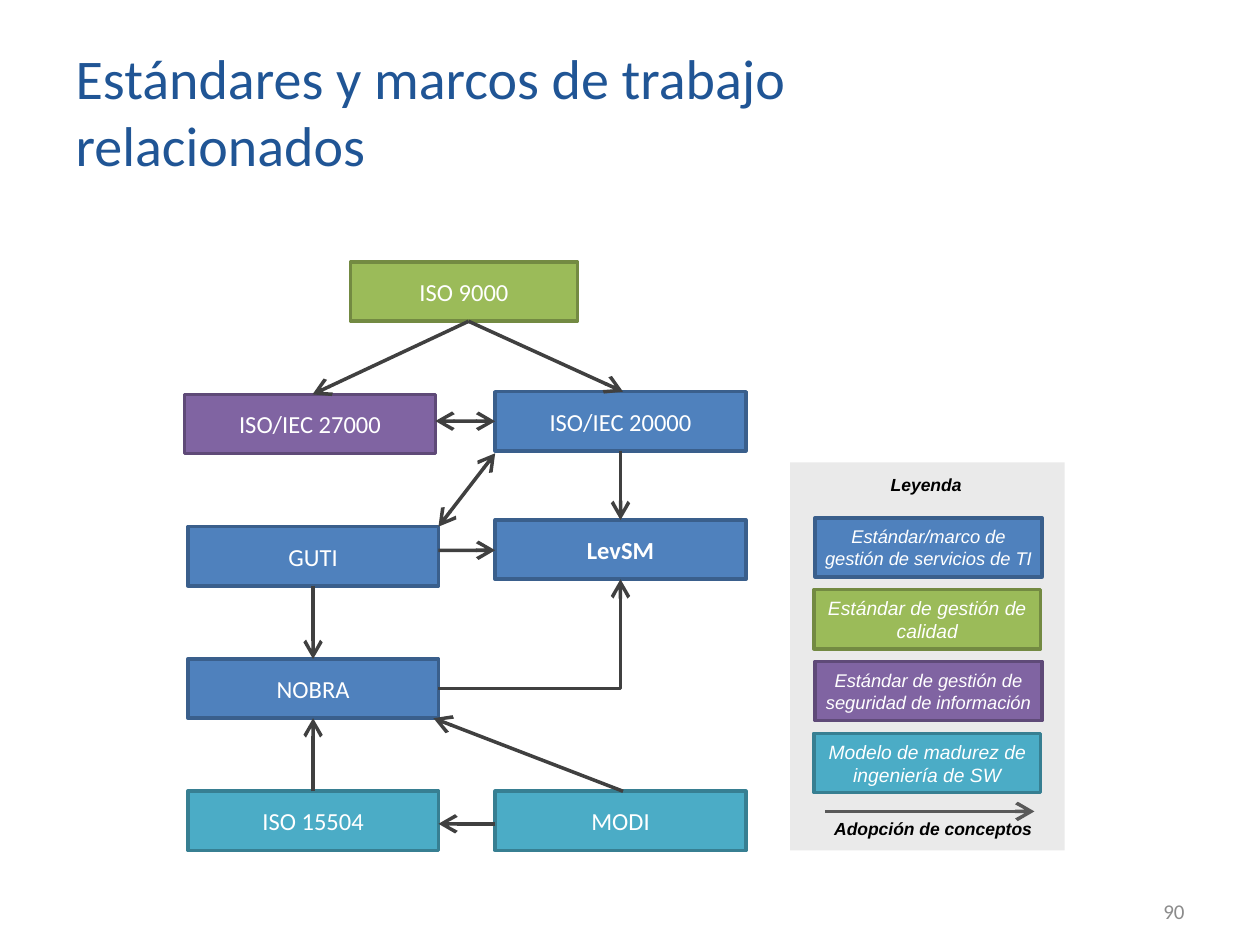
import pptx
import pptx.util
import pptx.dml.color
import pptx.enum.shapes
import pptx.enum.text
import pptx.oxml
import pptx.oxml.ns
from dataclasses import dataclass
from typing import Any

Align = pptx.enum.text.PP_ALIGN
Anchor = pptx.enum.text.MSO_ANCHOR
Point = tuple[float, float]
Rect = tuple[float, float, float, float]

WIDE, HIGH = 10, 7.5
LEFT, TOP = 1.49, 2.08  # first cell of the diagram
COL, ROW = 2.44, 1.05  # steps between cells
TALL = 0.47  # height of every box
STEP = 0.57  # step between legend boxes
COLORS = {
    "title": "205595", "page": "8B8B8B", "panel": "EAEAEA",
    "black": "000000", "white": "FFFFFF", "arrow": "404040", "key": "595959",
    "service": "4F81BD", "service edge": "3A5F8C",
    "quality": "9BBB59", "quality edge": "738A42",
    "safety": "8064A2", "safety edge": "5F4A78",
    "model": "4BACC6", "model edge": "377F92",
}


@dataclass
class Node:
    text: str
    kind: str
    col: float
    row: float
    width: float = 1.99
    bold: bool = False

    def rect(self) -> Rect:
        return LEFT + COL * self.col, TOP + ROW * self.row, self.width, TALL

    def spot(self, share: Point) -> Point:
        """Point at a share of the box's width and height."""
        x, y, w, h = self.rect()
        return x + w * share[0], y + h * share[1]


@dataclass
class Link:
    start: str
    leave: Point
    end: str
    enter: Point
    both: bool = False
    bent: bool = False


@dataclass
class Entry:
    text: str
    kind: str
    size: float
    left: float


NODES = [
    Node("ISO 9000", "quality", 0.53, 0, 1.8),
    Node("ISO/IEC 27000", "safety", -0.01, 1),
    Node("ISO/IEC 20000", "service", 1, 0.98),
    Node("GUTI", "service", 0, 2),
    Node("LevSM", "service", 1, 1.95, bold=True),
    Node("NOBRA", "service", 0, 3),
    Node("ISO 15504", "model", 0, 4),
    Node("MODI", "model", 1, 4),
]
LINKS = [
    Link("ISO 9000", (0.52, 1), "ISO/IEC 27000", (0.51, 0)),
    Link("ISO 9000", (0.52, 1), "ISO/IEC 20000", (0.51, 0)),
    Link("ISO/IEC 27000", (1, 0.45), "ISO/IEC 20000", (0, 0.5), both=True),
    Link("GUTI", (1, 0), "ISO/IEC 20000", (0, 1.04), both=True),
    Link("GUTI", (1, 0.4), "LevSM", (0, 0.51)),
    Link("ISO/IEC 20000", (0.5, 1), "LevSM", (0.5, 0)),
    Link("GUTI", (0.5, 1), "NOBRA", (0.5, 0)),
    Link("NOBRA", (1, 0.5), "LevSM", (0.5, 1), bent=True),
    Link("ISO 15504", (0.5, 0), "NOBRA", (0.5, 1)),
    Link("MODI", (0.51, 0), "NOBRA", (0.98, 1)),
    Link("MODI", (0, 0.55), "ISO 15504", (1, 0.55)),
]
LEGEND = [
    Entry("Estándar/marco de gestión de servicios de TI", "service", 10.5, 6.47),
    Entry("Estándar de gestión de calidad", "quality", 11, 6.46),
    Entry("Estándar de gestión de seguridad de información", "safety", 10.5, 6.47),
    Entry("Modelo de madurez de ingeniería de SW", "model", 11, 6.46),
]


def color(name: str) -> Any:
    return pptx.dml.color.RGBColor.from_string(COLORS[name])


def inches(*sides: float) -> list[int]:
    return [pptx.util.Inches(side) for side in sides]


def write(shape: Any, text: str, size: float, tint: str, face: str = "Calibri",
          align: Any = Align.CENTER, anchor: Any = Anchor.MIDDLE,
          bold: bool = False, slant: bool = False, wrap: bool = True,
          tight: bool = True) -> None:
    frame = shape.text_frame
    frame.text = text
    frame.word_wrap = wrap
    frame.vertical_anchor = anchor
    if tight:
        frame.margin_left = frame.margin_right = pptx.util.Inches(0.07)
        frame.margin_top = frame.margin_bottom = pptx.util.Inches(0.04)
    line = frame.paragraphs[0]
    line.alignment = align
    font = line.runs[0].font
    font.name, font.size = face, pptx.util.Pt(size)
    font.bold, font.italic = bold, slant
    font.color.rgb = color(tint)


def block(slide: Any, rect: Rect, fill: str, edge: str = "") -> Any:
    kind = pptx.enum.shapes.MSO_SHAPE.RECTANGLE
    shape = slide.shapes.add_shape(kind, *inches(*rect))
    shape.shadow.inherit = False
    shape.fill.solid()
    shape.fill.fore_color.rgb = color(fill)
    if edge:
        shape.line.color.rgb = color(edge)
        shape.line.width = pptx.util.Pt(2)
    else:
        shape.line.fill.background()
    return shape


def arrow(slide: Any, start: Point, end: Point, tint: str = "arrow",
          both: bool = False, bent: bool = False) -> None:
    kinds = pptx.enum.shapes.MSO_CONNECTOR
    kind = kinds.ELBOW if bent else kinds.STRAIGHT
    line = slide.shapes.add_connector(kind, *inches(*start, *end))
    line.line.color.rgb = color(tint)
    line.line.width = pptx.util.Pt(2)
    props = line._element.spPr
    if bent:  # one corner only
        props.find(pptx.oxml.ns.qn("a:prstGeom")).set("prst", "bentConnector2")
    space = pptx.oxml.ns.nsdecls("a")
    stroke = line.line._get_or_add_ln()
    for tag in ["a:headEnd", "a:tailEnd"] if both else ["a:tailEnd"]:
        tip = f'<{tag} {space} type="arrow" w="lg" len="lg"/>'
        stroke.append(pptx.oxml.parse_xml(tip))
    props.append(pptx.oxml.parse_xml(f"<a:effectLst {space}/>"))


def label(slide: Any, rect: Rect, text: str, **style: Any) -> None:
    write(slide.shapes.add_textbox(*inches(*rect)), text, **style)


def diagram(slide: Any) -> None:
    for node in NODES:
        box = block(slide, node.rect(), node.kind, node.kind + " edge")
        write(box, node.text, 14, "white", bold=node.bold, wrap=False)
    names = {node.text: node for node in NODES}
    for link in LINKS:
        start = names[link.start].spot(link.leave)
        end = names[link.end].spot(link.enter)
        arrow(slide, start, end, both=link.both, bent=link.bent)


def legend(slide: Any) -> None:
    block(slide, (6.27, 3.67, 2.18, 3.08), "panel")
    style = dict(size=10, tint="black", face="Arial", bold=True, slant=True,
                 anchor=Anchor.TOP)
    label(slide, (6.36, 3.72, 1.98, 0.24), "Leyenda", **style)
    for row, item in enumerate(LEGEND):
        rect = (item.left, 4.11 + STEP * row, 1.8, TALL)
        box = block(slide, rect, item.kind, item.kind + " edge")
        write(box, item.text, item.size, "white", "Arial", slant=True)
    arrow(slide, (6.55, 6.44), (8.21, 6.44), "key")
    label(slide, (6.27, 6.45, 2.27, 0.24), "Adopción de conceptos", **style)


def main() -> None:
    deck = pptx.Presentation()
    deck.slide_width, deck.slide_height = inches(WIDE, HIGH)
    slide = deck.slides.add_slide(deck.slide_layouts[5])
    title = slide.shapes.title
    title.left, title.top, title.width, title.height = inches(0.5, 0.3, 7.72, 1.15)
    write(title, "Estándares y marcos de trabajo relacionados", 32, "title",
          align=Align.LEFT, tight=False)
    legend(slide)
    diagram(slide)
    label(slide, (7.17, 7.03, 2.33, 0.4), "90", size=12, tint="page",
          align=Align.RIGHT, tight=False)
    deck.save("out.pptx")


if __name__ == "__main__":
    main()
